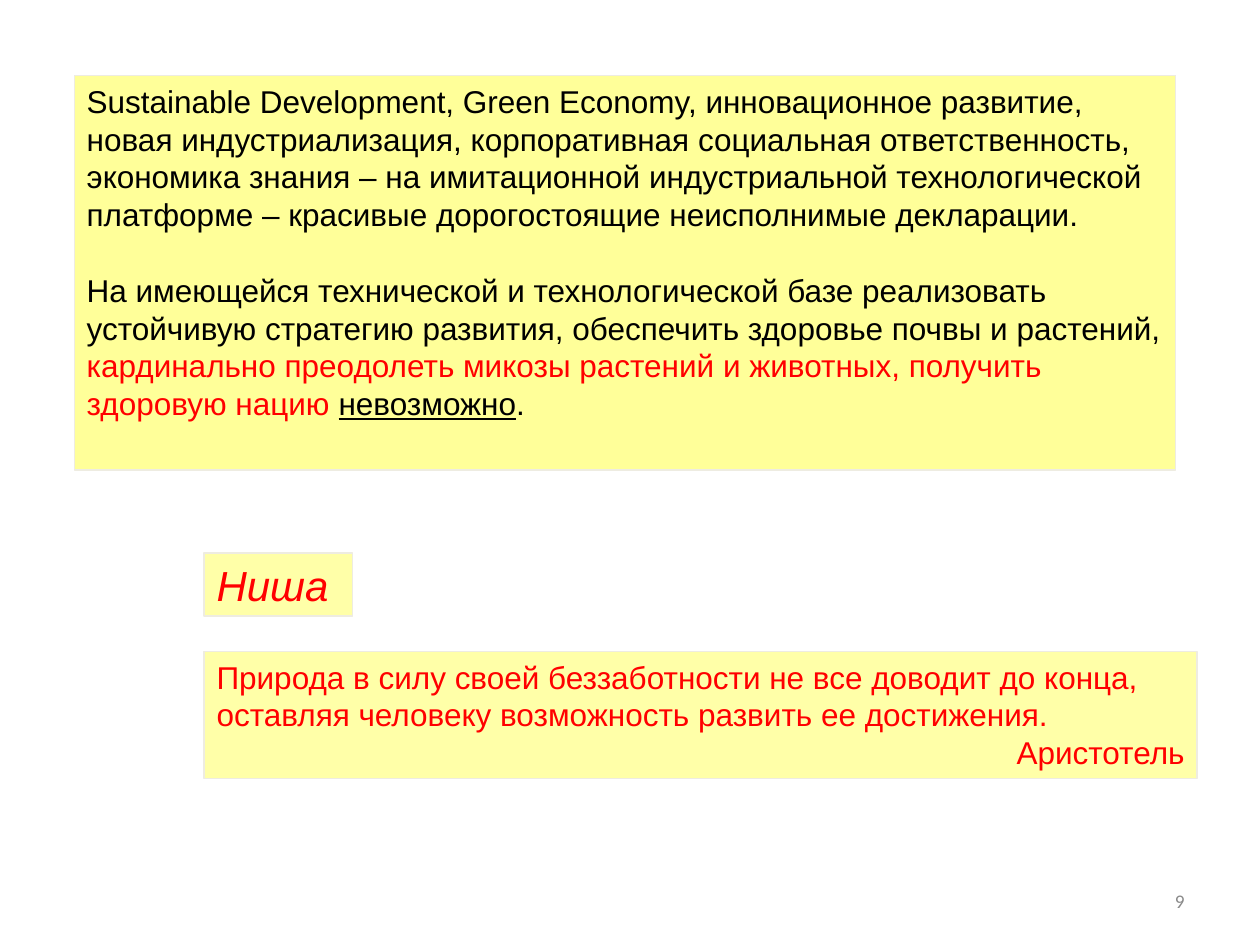
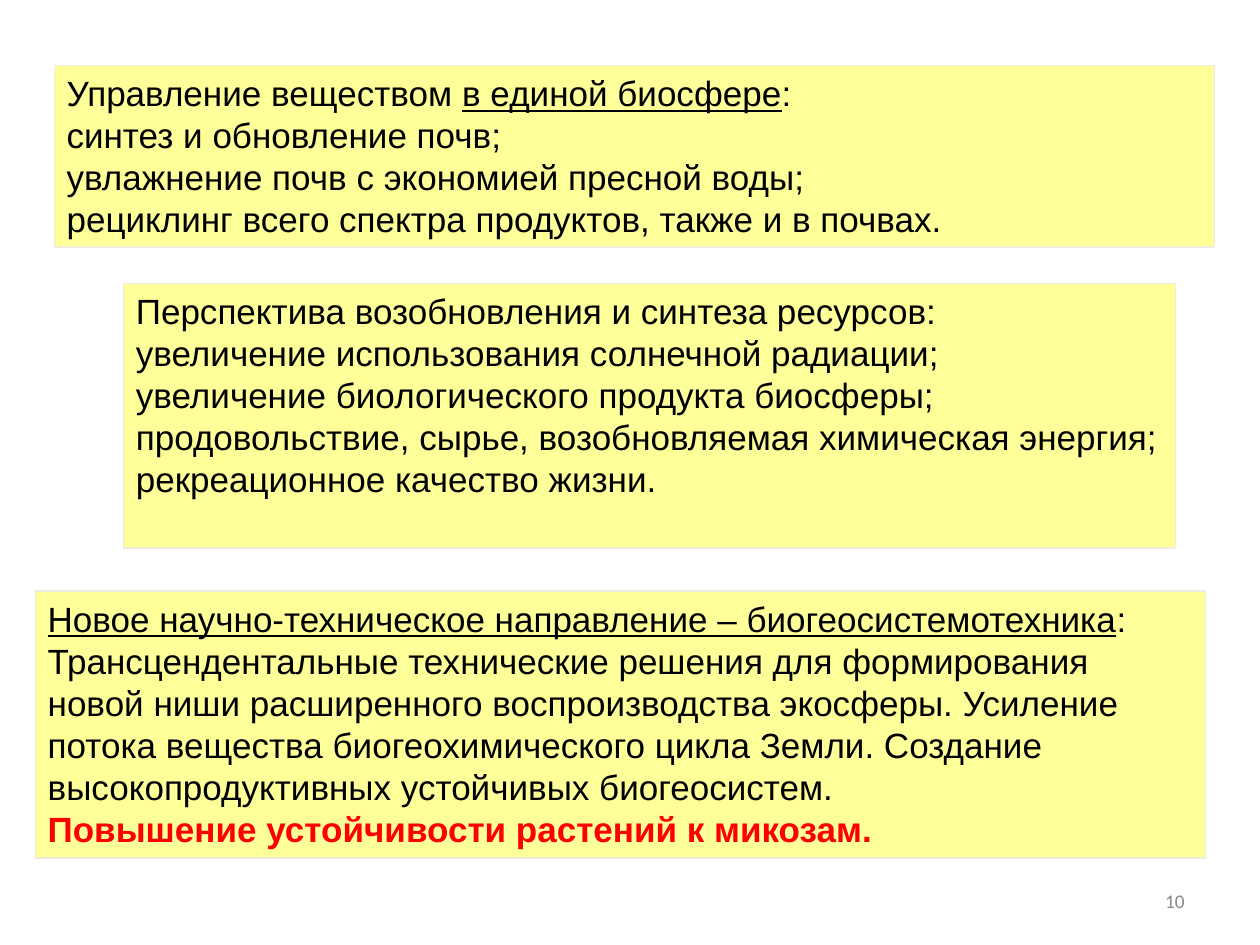
from lxml.etree import SubElement
from pptx import Presentation
from pptx.dml.color import RGBColor
from pptx.enum.shapes import MSO_SHAPE as SHAPE
from pptx.enum.text import MSO_ANCHOR as ANCHOR, PP_ALIGN as ALIGN
from pptx.oxml.ns import qn
from pptx.util import Inches, Pt

YELLOW, BORDER = "FFFF99", "EEECE1"
BLACK, RED, GREY = "000000", "FF0000", "898989"
BODY_FONT, NUMBER_FONT = "Arial", "Calibri"


def color(value):
    return RGBColor.from_string(value)


def add_span(para, text, size, tint=BLACK, font=BODY_FONT, **styles):
    span = para.add_run()
    span.text = text
    formats = {"name": font, "size": Pt(size), **styles}
    for name, value in formats.items():
        setattr(span.font, name, value)
    span.font.color.rgb = color(tint)


def set_frame(frame, anchor):
    formats = {
        "word_wrap": True,
        "vertical_anchor": anchor,
        "margin_left": Inches(0.1),
        "margin_right": Inches(0.1),
        "margin_top": Inches(0.05),
        "margin_bottom": Inches(0.05),
    }
    for name, value in formats.items():
        setattr(frame, name, value)


def add_para(frame, index, align=ALIGN.LEFT, gap=0):
    para = frame.add_paragraph() if index else frame.paragraphs[0]
    para.alignment = align
    if gap:
        para.space_before = Pt(gap)
    return para


def add_panel(page, area, paras, size, alpha=100):
    panel = page.shapes.add_shape(SHAPE.RECTANGLE, *map(Inches, area))
    panel.shadow.inherit = False
    panel.fill.solid()
    panel.fill.fore_color.rgb = color(YELLOW)
    if alpha < 100:
        tone = panel.fill._xPr.find(qn("a:solidFill"))[0]
        SubElement(tone, qn("a:alpha"), val=str(alpha * 1000))
    panel.line.color.rgb = color(BORDER)
    panel.line.width = Pt(0.75)
    set_frame(panel.text_frame, ANCHOR.TOP)
    for index, (spans, layout) in enumerate(paras):
        para = add_para(panel.text_frame, index, **layout)
        for text, styles in spans:
            add_span(para, text, size, **styles)


def plain(text, **styles):
    return [(text, styles)], {}


def add_page(deck, number):
    page = deck.slides.add_slide(deck.slide_layouts[6])
    box = page.shapes.add_textbox(*map(Inches, (7.17, 6.95, 2.33, 0.4)))
    set_frame(box.text_frame, ANCHOR.MIDDLE)
    para = add_para(box.text_frame, 0, ALIGN.RIGHT)
    add_span(para, str(number), 11, GREY, NUMBER_FONT)
    return page


def build_niche_page(deck):
    page = add_page(deck, 9)
    add_panel(page, (0.59, 0.6, 8.74, 3.13), [
        plain("Sustainable Development, Green Economy, инновационное развитие, "
              "новая индустриализация, корпоративная социальная ответственность, "
              "экономика знания – на имитационной индустриальной технологической "
              "платформе – красивые дорогостоящие неисполнимые декларации."),
        ([("На имеющейся технической и технологической базе реализовать "
           "устойчивую стратегию развития, обеспечить здоровье почвы и растений, ", {}),
          ("кардинально преодолеть микозы растений и животных, получить "
           "здоровую нацию ", {"tint": RED}),
          ("невозможно", {"underline": True}),
          (".", {})], {"gap": 21.6}),
    ], 18)
    add_panel(page, (1.62, 5.17, 7.88, 1.01), [
        plain("Природа в силу своей беззаботности не все доводит до конца, "
              "оставляя человеку возможность развить ее достижения.", tint=RED),
        ([("Аристотель", {"tint": RED})], {"align": ALIGN.RIGHT}),
    ], 18, alpha=85)
    add_panel(page, (1.62, 4.39, 1.18, 0.5),
              [plain("Ниша", tint=RED, italic=True)], 24, alpha=85)


def build_biosphere_page(deck):
    page = add_page(deck, 10)
    add_panel(page, (0.43, 0.52, 9.21, 1.44), [
        ([("Управление веществом ", {}),
          ("в единой биосфере", {"underline": True}),
          (":", {})], {}),
        plain("синтез и обновление почв;"),
        plain("увлажнение почв с экономией пресной воды;"),
        plain("рециклинг всего спектра продуктов, также и в почвах."),
    ], 20)
    add_panel(page, (0.98, 2.25, 8.35, 2.1), [
        plain("Перспектива возобновления и синтеза ресурсов:"),
        plain("увеличение использования солнечной радиации;"),
        plain("увеличение биологического продукта биосферы;"),
        plain("продовольствие, сырье, возобновляемая химическая энергия; "
              "рекреационное качество жизни."),
    ], 20)
    add_panel(page, (0.28, 4.69, 9.29, 2.12), [
        ([("Новое научно-техническое направление – биогеосистемотехника",
           {"underline": True}),
          (": Трансцендентальные технические решения для формирования новой ниши "
           "расширенного воспроизводства экосферы. Усиление потока вещества "
           "биогеохимического цикла Земли. Создание высокопродуктивных "
           "устойчивых биогеосистем.", {})], {}),
        plain("Повышение устойчивости растений к микозам.", tint=RED, bold=True),
    ], 20)


def main():
    deck = Presentation()
    deck.slide_width, deck.slide_height = Inches(10), Inches(7.5)
    build_niche_page(deck)
    build_biosphere_page(deck)
    deck.save("out.pptx")


if __name__ == "__main__":
    main()
